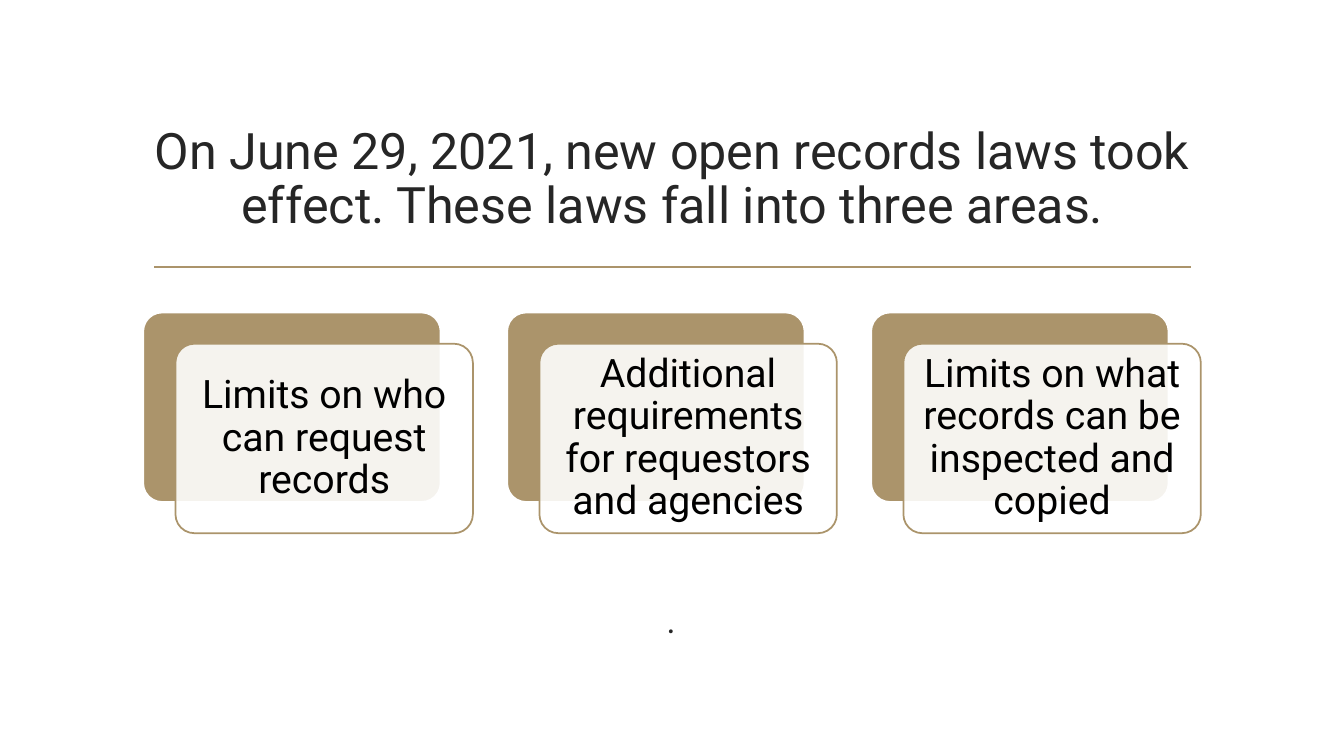
from lxml import etree
from pptx import Presentation
from pptx.dml.color import RGBColor
from pptx.enum import shapes, text
from pptx.oxml import ns
from pptx.util import Inches, Pt

TITLE = "On June 29, 2021, new open records laws took effect. These laws fall into three areas."
AREAS = [
    "Limits on who can request records",
    "Additional requirements for requestors and agencies",
    "Limits on what records can be inspected and copied",
]
CLOSING = "."
COLORS = {"gold": "AB946B", "white": "FFFFFF", "ink": "262626", "black": "000000"}
FONT = "Roboto"

LEFT, CONTENT_WIDTH = 1.42, 10.5
CARD_TOP, CARD_WIDTH, CARD_HEIGHT = 3.1, 2.95, 1.88
CARD_PITCH = 3.61
OFFSET_X, OFFSET_Y = 0.32, 0.31
CARD_OPACITY = 89


def color(name):
    return RGBColor.from_string(COLORS[name])


def write(shape, content, size, ink, inset_x, inset_y, anchor):
    frame = shape.text_frame
    frame.text = content
    frame.word_wrap = True
    frame.auto_size = text.MSO_AUTO_SIZE.NONE
    frame.vertical_anchor = anchor
    frame.margin_left = frame.margin_right = Inches(inset_x)
    frame.margin_top = frame.margin_bottom = Inches(inset_y)
    paragraph = frame.paragraphs[0]
    paragraph.alignment = text.PP_ALIGN.CENTER
    paragraph.line_spacing = 0.9
    paragraph.space_before = Pt(0)
    font = paragraph.runs[0].font
    font.name, font.size = FONT, Pt(size)
    font.color.rgb = color(ink)
    return font


def add_card(slide, left, top, fill, line):
    card = slide.shapes.add_shape(
        shapes.MSO_SHAPE.ROUNDED_RECTANGLE,
        Inches(left), Inches(top), Inches(CARD_WIDTH), Inches(CARD_HEIGHT))
    card.adjustments[0] = 0.1
    card.shadow.inherit = False
    card.fill.solid()
    card.fill.fore_color.rgb = color(fill)
    card.line.color.rgb = color(line)
    card.line.width = Pt(1.25)
    return card


def set_opacity(shape, percent):
    fill_color = shape.fill._xPr.find(ns.qn("a:solidFill"))[0]
    etree.SubElement(fill_color, ns.qn("a:alpha"), val=str(percent * 1000))


def add_rule(slide):
    rule = slide.shapes.add_connector(
        shapes.MSO_CONNECTOR.STRAIGHT,
        Inches(1.53), Inches(2.65), Inches(11.81), Inches(2.65))
    rule.line.color.rgb = color("gold")
    rule.line.width = Pt(1.25)
    etree.SubElement(rule._element.spPr, ns.qn("a:effectLst"))


def main():
    presentation = Presentation()
    presentation.slide_width, presentation.slide_height = Inches(13.33), Inches(7.5)
    slide = presentation.slides.add_slide(presentation.slide_layouts[5])
    add_rule(slide)

    title = slide.shapes.title
    title.left, title.top = Inches(LEFT), Inches(1.07)
    title.width, title.height = Inches(CONTENT_WIDTH), Inches(1.43)
    write(title, TITLE, 35.9, "ink", 0.1, 0.05, text.MSO_ANCHOR.MIDDLE)

    for column, area in enumerate(AREAS):
        left = LEFT + column * CARD_PITCH
        add_card(slide, left, CARD_TOP, "gold", "white")
        front = add_card(slide, left + OFFSET_X, CARD_TOP + OFFSET_Y, "white", "gold")
        set_opacity(front, CARD_OPACITY)
        write(front, area, 28, "black", 0.13, 0.13, text.MSO_ANCHOR.MIDDLE)

    closing = slide.shapes.add_textbox(
        Inches(LEFT), Inches(5.88), Inches(CONTENT_WIDTH), Inches(0.72))
    font = write(closing, CLOSING, 25, "ink", 0.1, 0.1, text.MSO_ANCHOR.TOP)
    font.italic = True

    presentation.save("out.pptx")


if __name__ == "__main__":
    main()
